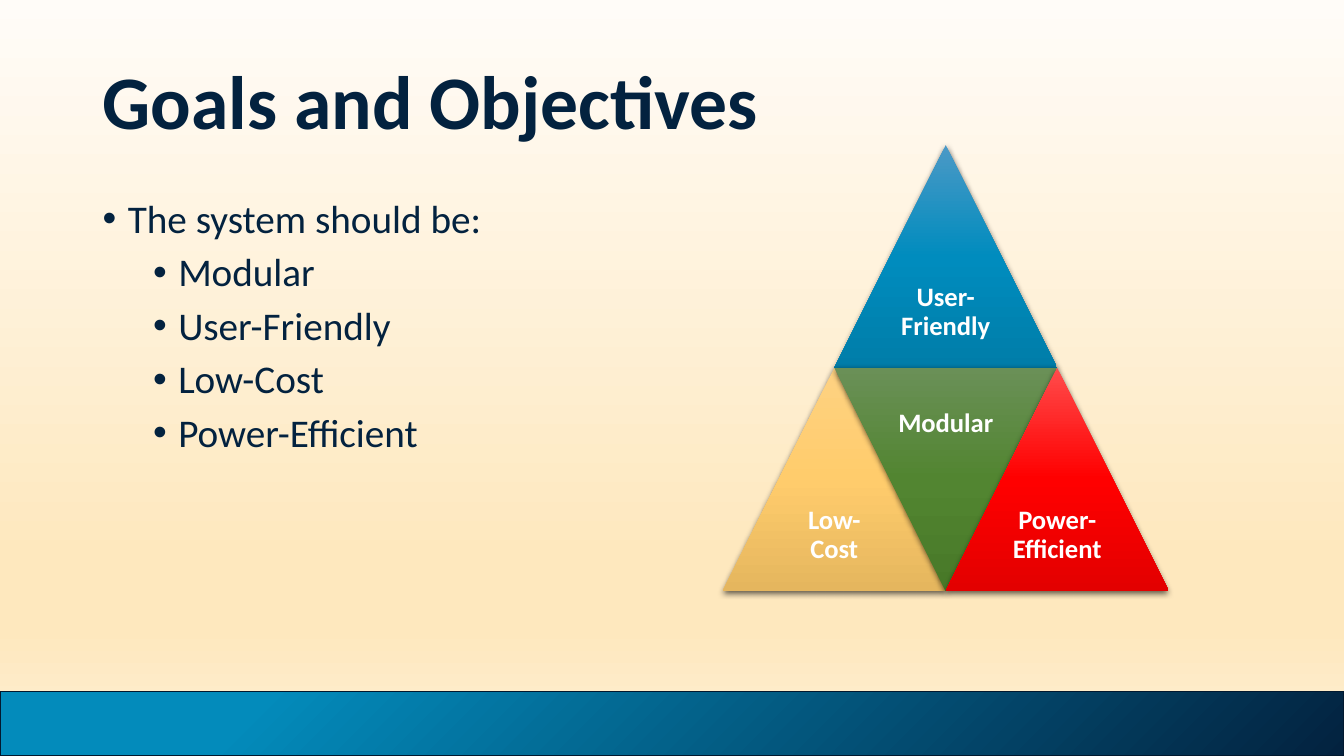
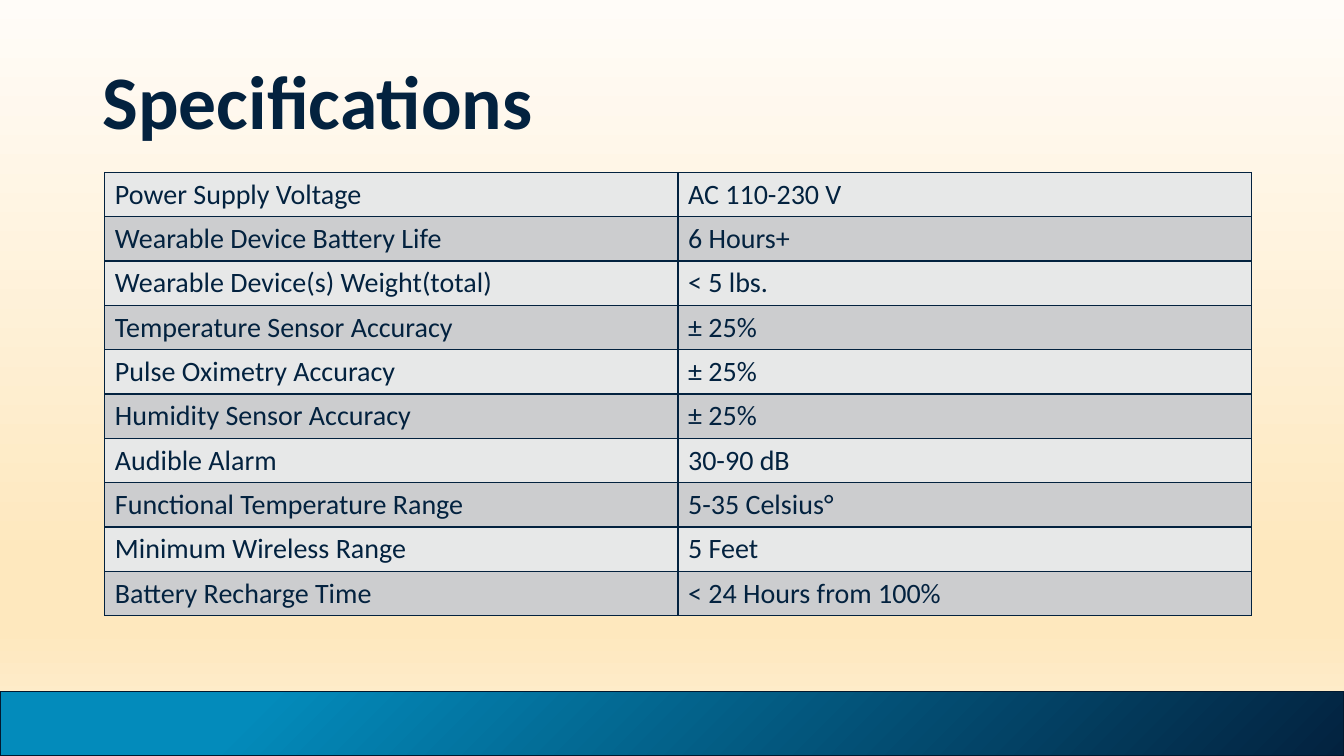
from dataclasses import dataclass

from lxml import etree
from pptx import Presentation
from pptx import util as u
from pptx.dml.color import RGBColor
from pptx.dml.fill import FillFormat
from pptx.enum import shapes, text
from pptx.oxml.ns import qn
from pptx.slide import Slide
from pptx.text.text import TextFrame

Stops = tuple[tuple[int, str], ...]


@dataclass(frozen=True)
class Theme:
    font: str = "Calibri"
    navy: str = "03223F"
    white: str = "FFFFFF"
    shadow: str = "000000"
    band_line: str = "02192F"
    row_fills: tuple[str, str] = ("E7E8E8", "CCCDCF")
    page_stops: Stops = ((0, "FFFCF8"), (74, "FEE8BE"), (83, "FEE8BE"), (100, "FEEFD4"))
    band_stops: Stops = ((0, "03223F"), (81, "038BBB"), (100, "038BBB"))
    title_size: int = 54
    body_size: int = 28
    table_size: int = 20
    label_size: int = 19


@dataclass(frozen=True)
class Area:
    left: float
    top: float
    width: float
    height: float

    def lengths(self) -> tuple[u.Length, ...]:
        return tuple(u.Inches(n) for n in (self.left, self.top, self.width, self.height))


@dataclass(frozen=True)
class Triangle:
    """A tile of the pyramid; column counts half sides, row counts whole sides."""
    label: str
    column: int
    row: int
    colors: tuple[str, str, str]
    inverted: bool = False


@dataclass(frozen=True)
class Bullet:
    text: str
    level: int = 0


THEME = Theme()
PAGE = Area(0, 0, 13.33, 7.5)
BAND = Area(0, 6.86, 13.33, 0.64)
TITLE = Area(0.92, 0.26, 11.5, 1.45)
BODY = Area(0.92, 1.93, 5.6, 4.42)
TABLE = Area(1.04, 1.71, 11.37, 4.4)
PYRAMID_LEFT, PYRAMID_TOP, SIDE = 7.17, 1.44, 2.21

BULLETS = (
    Bullet("The system should be:"),
    Bullet("Modular", 1),
    Bullet("User-Friendly", 1),
    Bullet("Low-Cost", 1),
    Bullet("Power-Efficient", 1),
)
TRIANGLES = (
    Triangle("User-Friendly", 1, 0, ("4B99C6", "008CBE", "007DA9")),
    Triangle("Low-Cost", 0, 1, ("FED282", "FFCC6C", "E5B65E")),
    Triangle("Modular", 1, 1, ("6A9057", "528531", "487928"), inverted=True),
    Triangle("Power-Efficient", 2, 1, ("FF4B4B", "FF0000", "E30000")),
)
SPECIFICATIONS = (
    ("Power Supply Voltage", "AC 110-230 V"),
    ("Wearable Device Battery Life", "6 Hours+"),
    ("Wearable Device(s) Weight(total)", "< 5 lbs."),
    ("Temperature Sensor Accuracy", "± 25%"),
    ("Pulse Oximetry Accuracy", "± 25%"),
    ("Humidity Sensor Accuracy", "± 25%"),
    ("Audible Alarm", "30-90 dB"),
    ("Functional Temperature Range", "5-35 Celsius°"),
    ("Minimum Wireless Range", "5 Feet"),
    ("Battery Recharge Time", "< 24 Hours from 100%"),
)


def add_node(parent, tag: str, **attributes: object):
    values = {name: str(value) for name, value in attributes.items()}
    return etree.SubElement(parent, qn(tag), values)


def paint_gradient(fill: FillFormat, owner, stops: Stops, angle: int) -> None:
    """Fill with any number of stops; the angle runs clockwise and stays fixed to the page."""
    fill.gradient()
    gradient = next(owner.iter(qn("a:gradFill")))
    gradient.set("rotWithShape", "0")
    stop_list = gradient.find(qn("a:gsLst"))
    for old_stop in list(stop_list):
        stop_list.remove(old_stop)
    for position, color in stops:
        stop = add_node(stop_list, "a:gs", pos=position * 1000)
        add_node(stop, "a:srgbClr", val=color)
    gradient.find(qn("a:lin")).set("ang", str(angle * 60000))


def add_shadow(shape) -> None:
    shape.shadow.inherit = False
    effects = next(shape.element.iter(qn("a:effectLst")))
    shadow = add_node(effects, "a:outerShdw", blurRad=u.Pt(4.5), dist=u.Pt(1.5),
                      dir=90 * 60000, algn="ctr", rotWithShape=0)
    color = add_node(shadow, "a:srgbClr", val=THEME.shadow)
    add_node(color, "a:alpha", val=63000)


def write(frame: TextFrame, content: str, *, size: int, color: str = THEME.navy,
          bold: bool = False, align: text.PP_ALIGN = text.PP_ALIGN.LEFT,
          line_spacing: float = 1.0, new_paragraph: bool = False):
    para = frame.add_paragraph() if new_paragraph else frame.paragraphs[0]
    para.alignment = align
    para.line_spacing = line_spacing
    span = para.add_run()
    span.text = content
    span.font.name = THEME.font
    span.font.size = u.Pt(size)
    span.font.bold = bold
    span.font.color.rgb = RGBColor.from_string(color)
    return para


def add_text_box(parent, area: Area, anchor: text.MSO_ANCHOR) -> TextFrame:
    frame = parent.shapes.add_textbox(*area.lengths()).text_frame
    frame.word_wrap = True
    frame.vertical_anchor = anchor
    return frame


def add_page(deck, title: str) -> Slide:
    """Add a blank page with the shared background, band and title."""
    page = deck.slides.add_slide(deck.slide_layouts[6])
    paint_gradient(page.background.fill, page.element, THEME.page_stops, 90)
    band = page.shapes.add_shape(shapes.MSO_SHAPE.RECTANGLE, *BAND.lengths())
    band.shadow.inherit = False
    paint_gradient(band.fill, band.element, THEME.band_stops, 225)
    band.line.color.rgb = RGBColor.from_string(THEME.band_line)
    band.line.width = u.Pt(1)
    frame = add_text_box(page, TITLE, text.MSO_ANCHOR.MIDDLE)
    write(frame, title, size=THEME.title_size, bold=True)
    return page


def add_bullets(page: Slide, bullets: tuple[Bullet, ...]) -> None:
    frame = add_text_box(page, BODY, text.MSO_ANCHOR.TOP)
    for index, bullet in enumerate(bullets):
        para = write(frame, bullet.text, size=THEME.body_size, line_spacing=0.9,
                     new_paragraph=index > 0)
        para.level = bullet.level
        para.space_before = u.Pt(8 if index else 0)
        properties = para._p.get_or_add_pPr()
        properties.set("marL", str(u.Inches(0.25 + 0.5 * bullet.level)))
        properties.set("indent", str(u.Inches(-0.25)))
        add_node(properties, "a:buFont", typeface="Arial")
        add_node(properties, "a:buChar", char="•")


def add_triangle(group, triangle: Triangle) -> None:
    left = PYRAMID_LEFT + triangle.column * SIDE / 2
    top = PYRAMID_TOP + triangle.row * SIDE
    tile = group.shapes.add_shape(shapes.MSO_SHAPE.ISOSCELES_TRIANGLE,
                                  *Area(left, top, SIDE, SIDE).lengths())
    tile.rotation = 180 if triangle.inverted else 0
    paint_gradient(tile.fill, tile.element, tuple(zip((0, 50, 100), triangle.colors)), 90)
    tile.line.fill.background()
    add_shadow(tile)

    label_top = top if triangle.inverted else top + SIDE / 2
    label_area = Area(left + SIDE / 4, label_top, SIDE / 2, SIDE / 2)
    frame = add_text_box(group, label_area, text.MSO_ANCHOR.MIDDLE)
    frame.margin_left = frame.margin_right = u.Inches(0.08)
    frame.margin_top = frame.margin_bottom = u.Inches(0.08)
    write(frame, triangle.label, size=THEME.label_size, color=THEME.white, bold=True,
          align=text.PP_ALIGN.CENTER, line_spacing=0.9)


def add_borders(cell) -> None:
    properties = cell._tc.get_or_add_tcPr()
    for index, side in enumerate(("a:lnL", "a:lnR", "a:lnT", "a:lnB")):
        line = etree.Element(qn(side), {"w": str(u.Pt(1))})
        fill = add_node(line, "a:solidFill")
        add_node(fill, "a:srgbClr", val=THEME.navy)
        properties.insert(index, line)


def add_specification_table(page: Slide, rows: tuple[tuple[str, str], ...]) -> None:
    table = page.shapes.add_table(len(rows), len(rows[0]), *TABLE.lengths()).table
    table.first_row = table.horz_banding = False
    for row_index, values in enumerate(rows):
        for column_index, value in enumerate(values):
            cell = table.cell(row_index, column_index)
            cell.fill.solid()
            cell.fill.fore_color.rgb = RGBColor.from_string(THEME.row_fills[row_index % 2])
            add_borders(cell)
            write(cell.text_frame, value, size=THEME.table_size)


def main() -> None:
    deck = Presentation()
    deck.slide_width, deck.slide_height = PAGE.lengths()[2:]

    goals = add_page(deck, "Goals and Objectives")
    add_bullets(goals, BULLETS)
    pyramid = goals.shapes.add_group_shape()
    for triangle in TRIANGLES:
        add_triangle(pyramid, triangle)

    specifications = add_page(deck, "Specifications")
    add_specification_table(specifications, SPECIFICATIONS)

    deck.save("out.pptx")


if __name__ == "__main__":
    main()
